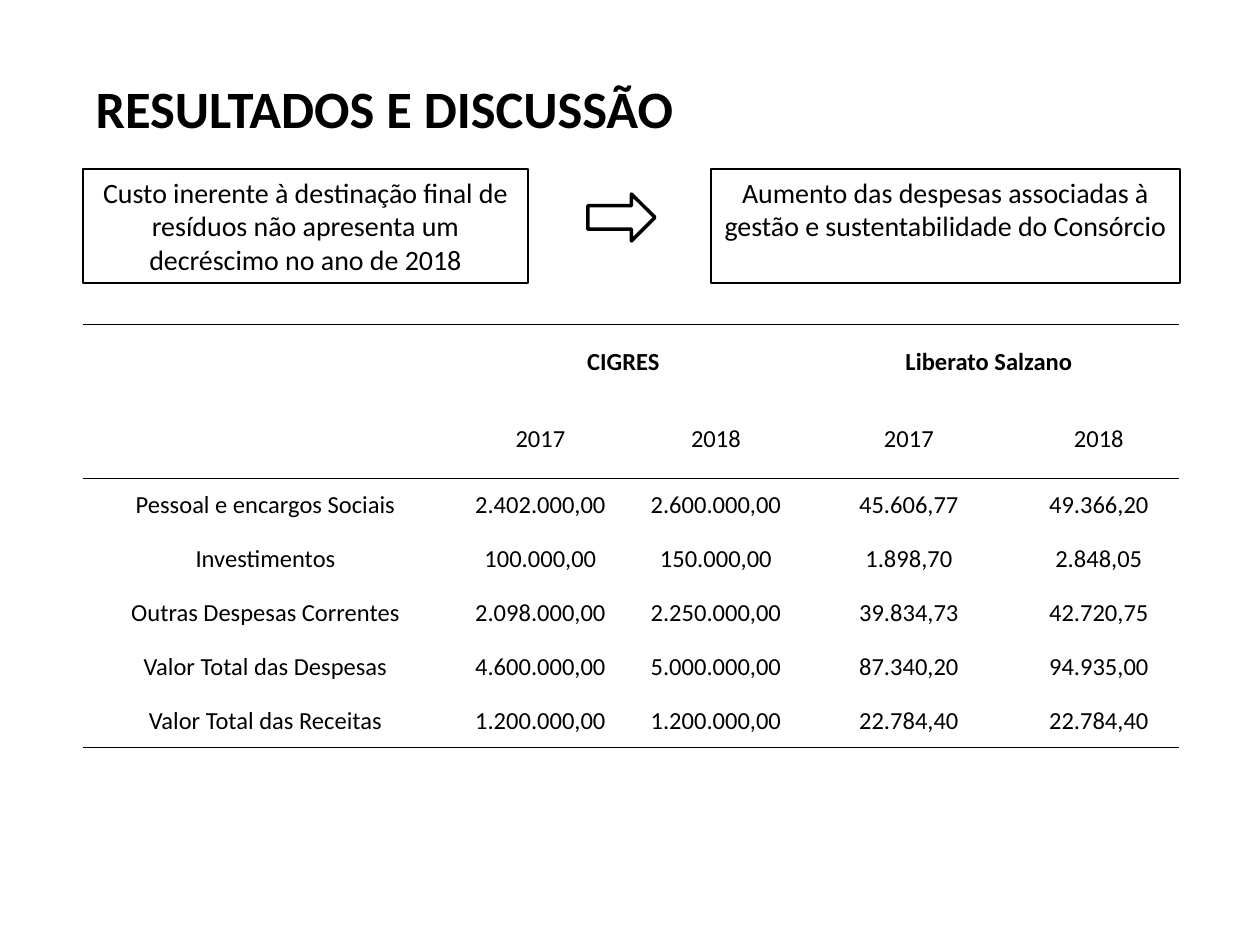
import pptx
import pptx.dml.color
import pptx.enum.shapes
import pptx.enum.text
import pptx.oxml.ns
import pptx.util
from lxml import etree

EMU_PER_PX = 914400 / 126
FONT = "Calibri"
BLACK = "000000"
WHITE = "FFFFFF"
ALIGN = pptx.enum.text.PP_ALIGN
ANCHOR = pptx.enum.text.MSO_ANCHOR
SHAPE = pptx.enum.shapes.MSO_SHAPE

COLUMN_WIDTHS = (365, 185, 166, 220, 160)
HEADER_HEIGHT = 77
BODY_HEIGHT = 54
EXPENSES = (
    ("", "CIGRES", "", "Liberato Salzano", ""),
    ("", "2017", "2018", "2017", "2018"),
    ("Pessoal e encargos Sociais", "2.402.000,00", "2.600.000,00", "45.606,77", "49.366,20"),
    ("Investimentos", "100.000,00", "150.000,00", "1.898,70", "2.848,05"),
    ("Outras Despesas Correntes", "2.098.000,00", "2.250.000,00", "39.834,73", "42.720,75"),
    ("Valor Total das Despesas", "4.600.000,00", "5.000.000,00", "87.340,20", "94.935,00"),
    ("Valor Total das Receitas", "1.200.000,00", "1.200.000,00", "22.784,40", "22.784,40"),
)
# Ruled edges by row: above and below the header, and below the last row
RULES = {0: ("T",), 1: ("B",), 2: ("T",), len(EXPENSES) - 1: ("B",)}


def px(length):
    return pptx.util.Emu(round(length * EMU_PER_PX))


def color(hex_value):
    return pptx.dml.color.RGBColor.from_string(hex_value)


def write(frame, text, size, align, bold=False):
    frame.text = text
    paragraph = frame.paragraphs[0]
    paragraph.alignment = align
    fonts = [run.font for run in paragraph.runs] or [paragraph.font]
    for font in fonts:
        font.name = FONT
        font.size = pptx.util.Pt(size)
        font.bold = bold
        font.color.rgb = color(BLACK)


def add_title(slide, text, left, top, width, height):
    title = slide.shapes.title
    title.left, title.top = px(left), px(top)
    title.width, title.height = px(width), px(height)
    title.text_frame.vertical_anchor = ANCHOR.MIDDLE
    write(title.text_frame, text, 30, ALIGN.LEFT, bold=True)


def add_outlined(slide, kind, left, top, width, height, line_width):
    outlined = slide.shapes.add_shape(kind, px(left), px(top), px(width), px(height))
    outlined.shadow.inherit = False
    outlined.fill.background()
    outlined.line.color.rgb = color(BLACK)
    outlined.line.width = pptx.util.Pt(line_width)
    return outlined


def add_statement(slide, text, left, width):
    statement = add_outlined(slide, SHAPE.RECTANGLE, left, 169, width, 114, 0.75)
    statement.fill.solid()
    statement.fill.fore_color.rgb = color(WHITE)
    statement.text_frame.word_wrap = True
    statement.text_frame.vertical_anchor = ANCHOR.TOP
    write(statement.text_frame, text, 16, ALIGN.CENTER)


def rule_cell(cell, edges):
    """Draw a thin black line on the given edges and none on the others."""
    properties = cell._tc.get_or_add_tcPr()
    qn = pptx.oxml.ns.qn
    for edge in "LRTB":
        line = etree.SubElement(properties, qn(f"a:ln{edge}"), w=str(pptx.util.Pt(0.5)))
        if edge in edges:
            fill = etree.SubElement(line, qn("a:solidFill"))
            etree.SubElement(fill, qn("a:srgbClr"), val=BLACK)
        else:
            etree.SubElement(line, qn("a:noFill"))


def add_expense_table(slide, left, top):
    heights = [HEADER_HEIGHT] * 2 + [BODY_HEIGHT] * (len(EXPENSES) - 2)
    table = slide.shapes.add_table(
        len(EXPENSES), len(COLUMN_WIDTHS),
        px(left), px(top), px(sum(COLUMN_WIDTHS)), px(sum(heights)),
    ).table
    table.first_row = False
    table.horz_banding = False
    for column, width in zip(table.columns, COLUMN_WIDTHS):
        column.width = px(width)
    for row, height in zip(table.rows, heights):
        row.height = px(height)

    for r, values in enumerate(EXPENSES):
        for c, value in enumerate(values):
            cell = table.cell(r, c)
            rule_cell(cell, RULES.get(r, ()))
            cell.fill.background()
            cell.vertical_anchor = ANCHOR.MIDDLE
            cell.margin_left = cell.margin_right = px(9)
            cell.margin_top = cell.margin_bottom = px(9)
            write(cell.text_frame, value, 14, ALIGN.CENTER, bold=r == 0)
    for c in (1, 3):
        table.cell(0, c).merge(table.cell(0, c + 1))


def main():
    deck = pptx.Presentation()
    deck.slide_width, deck.slide_height = px(1260), px(945)
    slide = deck.slides.add_slide(deck.slide_layouts[0])
    subtitle = slide.placeholders[1].element
    subtitle.getparent().remove(subtitle)

    add_expense_table(slide, 83, 324)
    add_statement(
        slide,
        "Custo inerente à destinação final de resíduos não apresenta um decréscimo no ano de 2018",
        83, 445,
    )
    add_title(slide, "RESULTADOS E DISCUSSÃO", 83, 69, 673, 78)
    add_statement(
        slide,
        "Aumento das despesas associadas à gestão e sustentabilidade do Consórcio",
        711, 469,
    )
    add_outlined(slide, SHAPE.RIGHT_ARROW, 588, 194, 67, 47, 2)
    deck.save("out.pptx")


if __name__ == "__main__":
    main()
